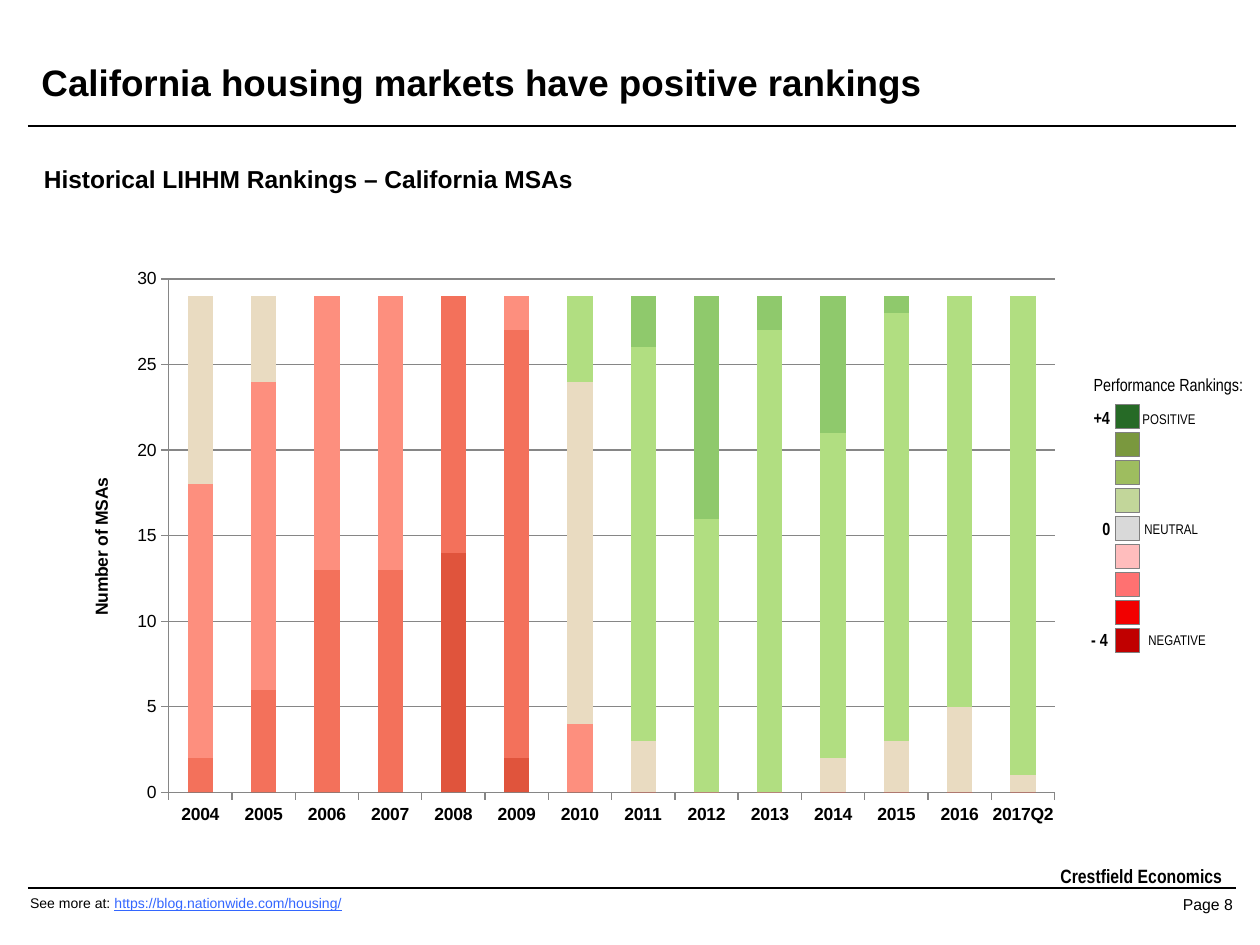
import pptx
import pptx.chart.data
import pptx.dml.color
import pptx.enum.chart
import pptx.enum.shapes
import pptx.enum.text
import pptx.oxml
import pptx.oxml.ns
import pptx.util

Pt = pptx.util.Pt
RGB = pptx.dml.color.RGBColor
ALIGN = pptx.enum.text.PP_ALIGN

BLACK = RGB(0x00, 0x00, 0x00)
GREY = RGB(0x80, 0x80, 0x80)
GRID = RGB(0x86, 0x86, 0x86)
BLUE = RGB(0x33, 0x66, 0xFF)

# Legend colours, from +4 down to -4
RANKS = [
    RGB(0x26, 0x6A, 0x26), RGB(0x7A, 0x98, 0x3E), RGB(0x9E, 0xBD, 0x5F),
    RGB(0xC2, 0xD6, 0x9A), RGB(0xD9, 0xD9, 0xD9), RGB(0xFF, 0xBD, 0xBD),
    RGB(0xFF, 0x71, 0x71), RGB(0xF2, 0x00, 0x00), RGB(0xC0, 0x00, 0x00),
]

YEARS = [str(year) for year in range(2004, 2017)] + ["2017Q2"]
NONE = [0] * len(YEARS)
# Colour and number of areas per year, from the lowest rank up
STACK = [
    (RGB(0xCC, 0x32, 0x1C), NONE),
    (RGB(0xE0, 0x54, 0x3C), [0, 0, 0, 0, 14, 2, 0, 0, 0, 0, 0, 0, 0, 0]),
    (RGB(0xF3, 0x71, 0x5B), [2, 6, 13, 13, 15, 25, 0, 0, 0, 0, 0, 0, 0, 0]),
    (RGB(0xFD, 0x8F, 0x7E), [16, 18, 16, 16, 0, 2, 4, 0, 0, 0, 0, 0, 0, 0]),
    (RGB(0xE9, 0xDB, 0xC1), [11, 5, 0, 0, 0, 0, 20, 3, 0, 0, 2, 3, 5, 1]),
    (RGB(0xB1, 0xDE, 0x81), [0, 0, 0, 0, 0, 0, 5, 23, 16, 27, 19, 25, 24, 28]),
    (RGB(0x8F, 0xC9, 0x6C), [0, 0, 0, 0, 0, 0, 0, 3, 13, 2, 8, 1, 0, 0]),
    (RGB(0x73, 0xB2, 0x60), NONE),
    (RGB(0x5C, 0xC5, 0x5B), NONE),
]

NARROW = {"name": "Arial Narrow", "size": Pt(10)}
SMALL = {**NARROW, "size": Pt(8)}
STRONG = {**NARROW, "bold": True}
FOOT = {"name": "Arial", "size": Pt(8)}
PLOT = {"x": 0.1, "y": 0.04, "w": 0.88, "h": 0.89}


def put(item, values):
    for name, value in values.items():
        setattr(item, name, value)


def style(font, values, color=BLACK):
    put(font, values)
    font.color.rgb = color


def add_run(para, text, values, color=BLACK):
    run = para.add_run()
    run.text = text
    style(run.font, values, color)


def add_text(slide, box, text, values, align=ALIGN.LEFT, wrap=True):
    frame = slide.shapes.add_textbox(*map(Pt, box)).text_frame
    put(frame, {"word_wrap": wrap,
                "auto_size": pptx.enum.text.MSO_AUTO_SIZE.SHAPE_TO_FIT_TEXT})
    para = frame.paragraphs[0]
    para.alignment = align
    add_run(para, text, values)
    return para


def add_rule(slide, top):
    rule = slide.shapes.add_connector(
        pptx.enum.shapes.MSO_CONNECTOR.STRAIGHT,
        Pt(16), Pt(top), Pt(706.3), Pt(top))
    rule.line.width = Pt(1)
    rule.line.color.rgb = BLACK
    rule._element.spPr.append(pptx.oxml.parse_xml(
        "<a:effectLst %s/>" % pptx.oxml.ns.nsdecls("a")))


def add_title(slide, text):
    title = slide.shapes.title
    put(title, {"left": Pt(16.5), "top": Pt(21.6),
                "width": Pt(638), "height": Pt(50.4)})
    frame = title.text_frame
    put(frame, {"word_wrap": True,
                "vertical_anchor": pptx.enum.text.MSO_ANCHOR.MIDDLE,
                "auto_size": pptx.enum.text.MSO_AUTO_SIZE.NONE})
    para = frame.paragraphs[0]
    para.alignment = ALIGN.LEFT
    add_run(para, text, {"name": "Arial", "size": Pt(21), "bold": True})


def add_swatch(slide, top, color):
    box = slide.shapes.add_shape(
        pptx.enum.shapes.MSO_SHAPE.RECTANGLE,
        Pt(637.2), Pt(top), Pt(13.7), Pt(13.7))
    box.shadow.inherit = False
    box.fill.solid()
    box.fill.fore_color.rgb = color
    box.line.width = Pt(0.25)
    box.line.color.rgb = GREY


def add_key(slide):
    for step, color in enumerate(RANKS):
        add_swatch(slide, 231.1 + 16.02 * step, color)
    add_text(slide, (617.8, 210.2, 108.7, 19.4), "Performance Rankings:", NARROW)
    # Scores to the left of the swatches
    add_text(slide, (617.8, 229, 26.6, 19.4), "+4", STRONG)
    add_text(slide, (622.8, 292.3, 26.6, 19.4), "0", STRONG)
    add_text(slide, (612, 355.7, 28.1, 19.4), "- 4", STRONG, ALIGN.RIGHT)
    # Words to the right
    add_text(slide, (645.8, 231.1, 45.4, 17.3), "POSITIVE", SMALL, wrap=False)
    add_text(slide, (646.6, 293.8, 45.4, 17.3), "NEUTRAL", SMALL,
             ALIGN.CENTER, False)
    add_text(slide, (648, 357.1, 48.2, 17.3), "NEGATIVE", SMALL,
             ALIGN.RIGHT, False)


def set_plot(chart):
    area = chart._chartSpace.chart.plotArea
    for old in area.findall(pptx.oxml.ns.qn("c:layout")):
        area.remove(old)
    spots = "".join('<c:%s val="%s"/>' % pair for pair in PLOT.items())
    area.insert(0, pptx.oxml.parse_xml(
        '<c:layout %s><c:manualLayout><c:layoutTarget val="inner"/>'
        '<c:xMode val="edge"/><c:yMode val="edge"/>%s'
        "</c:manualLayout></c:layout>" % (pptx.oxml.ns.nsdecls("c"), spots)))


def add_chart(slide):
    data = pptx.chart.data.CategoryChartData()
    data.categories = YEARS
    for count, (_, values) in enumerate(STACK, 1):
        data.add_series(f"Series {count}", values)
    chart = slide.shapes.add_chart(
        pptx.enum.chart.XL_CHART_TYPE.COLUMN_STACKED,
        Pt(38.9), Pt(146.2), Pt(575.3), Pt(329.8), data).chart
    put(chart, {"has_legend": False, "has_title": False})
    style(chart.font, {"name": "Arial", "size": Pt(10)})

    plot = chart.plots[0]
    put(plot, {"gap_width": 150, "overlap": 100, "vary_by_categories": False})
    for series, (color, _) in zip(plot.series, STACK):
        series.format.fill.solid()
        series.format.fill.fore_color.rgb = color

    years, count = chart.category_axis, chart.value_axis
    put(count, {"minimum_scale": 0, "maximum_scale": 30, "major_unit": 5,
                "has_major_gridlines": True})
    for axis in (years, count):
        axis.major_tick_mark = pptx.enum.chart.XL_TICK_MARK.OUTSIDE
        axis.format.line.color.rgb = GRID
    count.major_gridlines.format.line.color.rgb = GRID
    style(years.tick_labels.font, {"name": "Arial", "size": Pt(10), "bold": True})
    add_run(count.axis_title.text_frame.paragraphs[0], "Number of MSAs",
            {"name": "Arial", "size": Pt(10), "bold": True})
    set_plot(chart)


def main():
    deck = pptx.Presentation()
    put(deck, {"slide_width": Pt(720), "slide_height": Pt(540)})
    slide = deck.slides.add_slide(deck.slide_layouts[5])

    # Heading
    add_title(slide, "California housing markets have positive rankings")
    add_rule(slide, 72)
    add_text(slide, (18, 90, 383.8, 24.5),
             "Historical LIHHM Rankings – California MSAs",
             {"name": "Arial", "size": Pt(14), "bold": True})

    # Chart and its key
    add_chart(slide)
    add_key(slide)

    # Footer
    add_rule(slide, 507.6)
    add_text(slide, (591.8, 490.3, 113.8, 20.9), "Crestfield Economics",
             {**STRONG, "size": Pt(11)}, ALIGN.RIGHT, False)
    add_text(slide, (668.9, 507.6, 43.2, 18), "Page 8",
             {**FOOT, "size": Pt(9)}, wrap=False)
    more = add_text(slide, (10.1, 507.6, 660.2, 17.3), "See more at: ", FOOT)
    add_run(more, "https://blog.nationwide.com/housing/",
            {**FOOT, "underline": True}, BLUE)

    deck.save("out.pptx")


if __name__ == "__main__":
    main()
